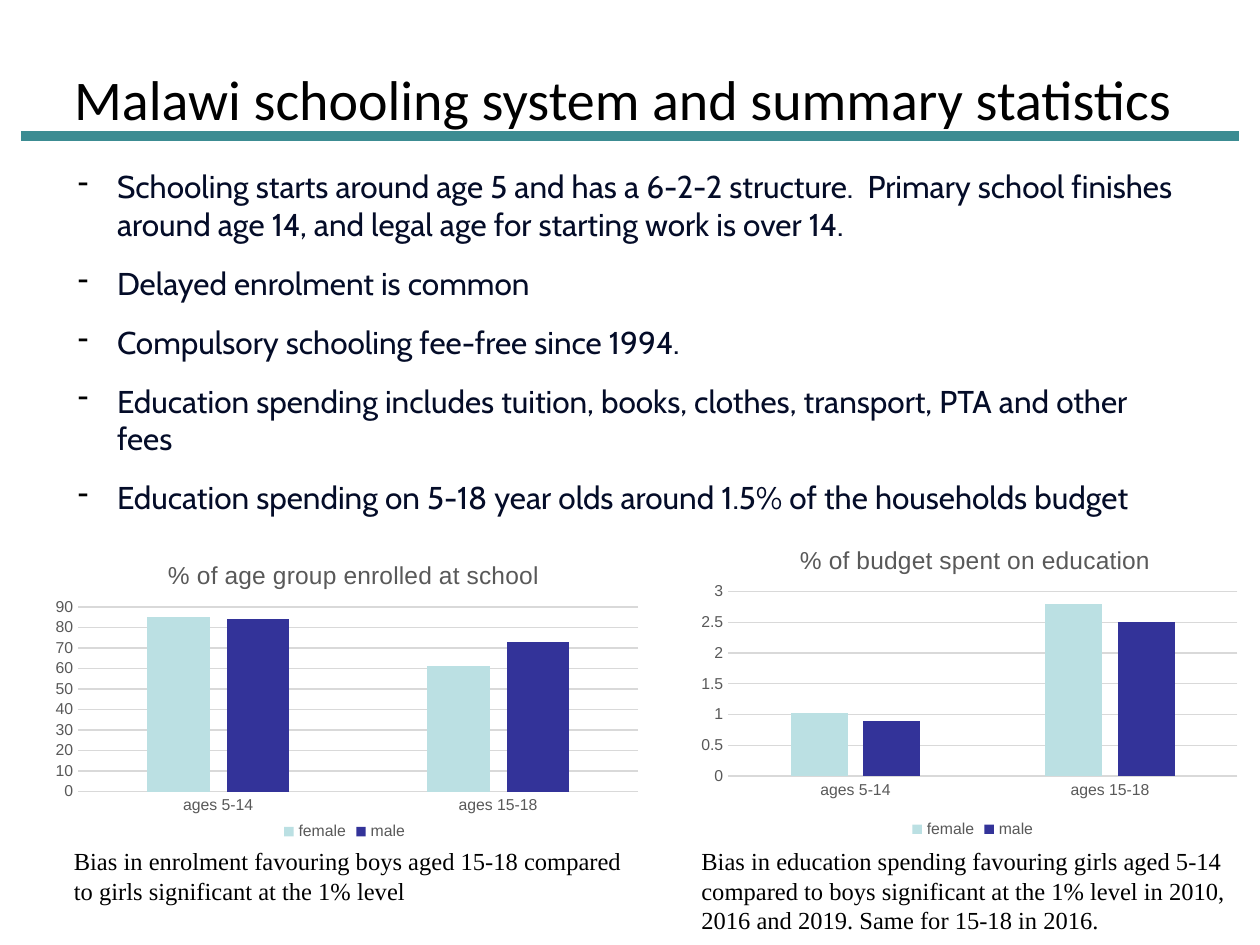
from lxml import etree
from pptx import Presentation
from pptx.chart.data import CategoryChartData
from pptx.dml.color import RGBColor
from pptx.enum.chart import XL_CHART_TYPE, XL_LEGEND_POSITION, XL_TICK_MARK
from pptx.enum.shapes import MSO_CONNECTOR
from pptx.enum.text import MSO_ANCHOR, PP_ALIGN
from pptx.oxml import parse_xml
from pptx.oxml.ns import nsdecls, qn
from pptx.util import Cm, Pt

COLUMNS = XL_CHART_TYPE.COLUMN_CLUSTERED
BOTTOM = XL_LEGEND_POSITION.BOTTOM
NO_TICK = XL_TICK_MARK.NONE
STRAIGHT = MSO_CONNECTOR.STRAIGHT
TOP = MSO_ANCHOR.TOP
LEFT = PP_ALIGN.LEFT

COLORS = {
    "black": "000000",
    "ink": "040C28",
    "rule": "3C8C92",
    "label": "595959",
    "grid": "D9D9D9",
    "female": "BBE0E3",
    "male": "333399",
}
AGE_GROUPS = ["ages 5-14", "ages 15-18"]
FACTS = [
    "Schooling starts around age 5 and has a 6-2-2 structure.  Primary school "
    "finishes around age 14, and legal age for starting work is over 14.",
    "Delayed enrolment is common",
    "Compulsory schooling fee-free since 1994.",
    "Education spending includes tuition, books, clothes, transport, PTA and other fees",
    "Education spending on 5-18 year olds around 1.5% of the households budget",
]


def rgb(name):
    return RGBColor.from_string(COLORS[name])


def set_layout(element, x, y, w=None, h=None):
    """Fix a chart part at fractions of the chart area; w and h size the inner plot."""
    for old in element.findall(qn("c:layout")):
        element.remove(old)
    inner = '<c:layoutTarget val="inner"/>' if w else ""
    size = f'<c:w val="{w}"/><c:h val="{h}"/>' if w else ""
    layout = parse_xml(
        f'<c:layout {nsdecls("c")}><c:manualLayout>{inner}'
        f'<c:xMode val="edge"/><c:yMode val="edge"/>'
        f'<c:x val="{x}"/><c:y val="{y}"/>{size}</c:manualLayout></c:layout>'
    )
    before = element.find(qn("c:tx"))
    if before is None:
        before = element.find(qn("c:legendPos"))
    if before is None:
        element.insert(0, layout)
    else:
        before.addnext(layout)


class SlideBuilder:
    def __init__(self, slide):
        self.slide = slide

    def style_font(self, font, size, face, color):
        font.size, font.name, font.bold = Pt(size), face, False
        font.color.rgb = rgb(color)

    def title(self, wording, left, top, width, height):
        heading = self.slide.shapes.title
        heading.left, heading.top = Cm(left), Cm(top)
        heading.width, heading.height = Cm(width), Cm(height)
        frame = heading.text_frame
        frame.text = wording
        frame.vertical_anchor = TOP
        frame.paragraphs[0].alignment = LEFT
        self.style_font(frame.paragraphs[0].runs[0].font, 32, "Calibri", "black")

    def rule(self, left, right, y):
        line = self.slide.shapes.add_connector(STRAIGHT, Cm(left), Cm(y), Cm(right), Cm(y))
        line.line.color.rgb = rgb("rule")
        line.line.width = Pt(6)
        etree.SubElement(line._element.spPr, qn("a:effectLst"))

    def text(self, lines, left, top, width, height, size, face, color):
        box = self.slide.shapes.add_textbox(Cm(left), Cm(top), Cm(width), Cm(height))
        frame = box.text_frame
        frame.word_wrap = True
        frame.text = "\n".join(lines)
        for paragraph in frame.paragraphs:
            self.style_font(paragraph.runs[0].font, size, face, color)
        return frame

    def dash_list(self, lines, *place):
        frame = self.text(lines, *place, 18, "Cabin", "ink")
        for paragraph in frame.paragraphs:
            paragraph.space_before = Pt(12)
            props = paragraph._p.get_or_add_pPr()
            props.set("marL", str(Cm(2.41)))
            props.set("indent", str(-Cm(0.79)))
            color = etree.SubElement(props, qn("a:buClr"))
            etree.SubElement(color, qn("a:srgbClr"), val=COLORS["black"])
            etree.SubElement(props, qn("a:buChar"), char="-")

    def column_chart(self, heading, series, place, top_value, step, plot, title_at, legend_at):
        data = CategoryChartData()
        data.categories = AGE_GROUPS
        for name, values in series.items():
            data.add_series(name, values)
        chart = self.slide.shapes.add_chart(COLUMNS, *map(Cm, place), data).chart
        self.style_font(chart.font, 10, "Arial", "black")

        chart.has_title = True
        title = chart.chart_title
        title.text_frame.text = heading
        self.style_font(title.text_frame.paragraphs[0].runs[0].font, 14, "Arial", "label")
        set_layout(title._element, *title_at)

        chart.has_legend = True
        chart.legend.position = BOTTOM
        chart.legend.include_in_layout = False
        self.style_font(chart.legend.font, 9, "Arial", "label")
        set_layout(chart.legend._element, *legend_at)

        for axis in (chart.category_axis, chart.value_axis):
            axis.major_tick_mark = axis.minor_tick_mark = NO_TICK
            self.style_font(axis.tick_labels.font, 9, "Arial", "label")
        values_axis = chart.value_axis
        values_axis.minimum_scale, values_axis.maximum_scale = 0, top_value
        values_axis.major_unit = step
        values_axis.format.line.fill.background()
        for line in (chart.category_axis.format.line, values_axis.major_gridlines.format.line):
            line.color.rgb = rgb("grid")
            line.width = Pt(0.75)

        columns = chart.plots[0]
        columns.gap_width, columns.overlap = 219, -27
        columns.vary_by_categories = False
        for sex in columns.series:
            sex.format.fill.solid()
            sex.format.fill.fore_color.rgb = rgb(sex.name)
        set_layout(chart._chartSpace.chart.plotArea, *plot)


def main():
    deck = Presentation()
    deck.slide_width, deck.slide_height = Cm(25.4), Cm(19.05)
    builder = SlideBuilder(deck.slides.add_slide(deck.slide_layouts[5]))

    builder.rule(0.43, 24.97, 2.74)
    builder.dash_list(FACTS, -0.3, 3.25, 24.31, 10.19)
    builder.title("Malawi schooling system and summary statistics", 1.24, 1.17, 23.06, 1.63)

    notes = [
        ("Bias in enrolment favouring boys aged 15-18 compared to girls "
         "significant at the 1% level", 1.24, 11.89, 1.45),
        ("Bias in education spending favouring girls aged 5-14 compared to boys "
         "significant at the 1% level in 2010, 2016 and 2019. Same for 15-18 in 2016.",
         13.89, 11.18, 2.06),
    ]
    for wording, left, width, height in notes:
        builder.text([wording], left, 16.94, width, height, 14, "Times New Roman", "black")

    builder.column_chart(
        "% of age group enrolled at school", {"female": (85, 61), "male": (84, 73)},
        (0.84, 10.8, 12.27, 6.53), 90, 10,
        plot=(0.06, 0.22, 0.92, 0.57), title_at=(0.2, 0.06), legend_at=(0.39, 0.87))
    builder.column_chart(
        "% of budget spent on education", {"female": (1.03, 2.8), "male": (0.9, 2.5)},
        (13.89, 10.49, 11.28, 6.53), 3, 0.5,
        plot=(0.07, 0.22, 0.91, 0.57), title_at=(0.19, 0.06), legend_at=(0.39, 0.91))

    deck.save("out.pptx")


if __name__ == "__main__":
    main()
